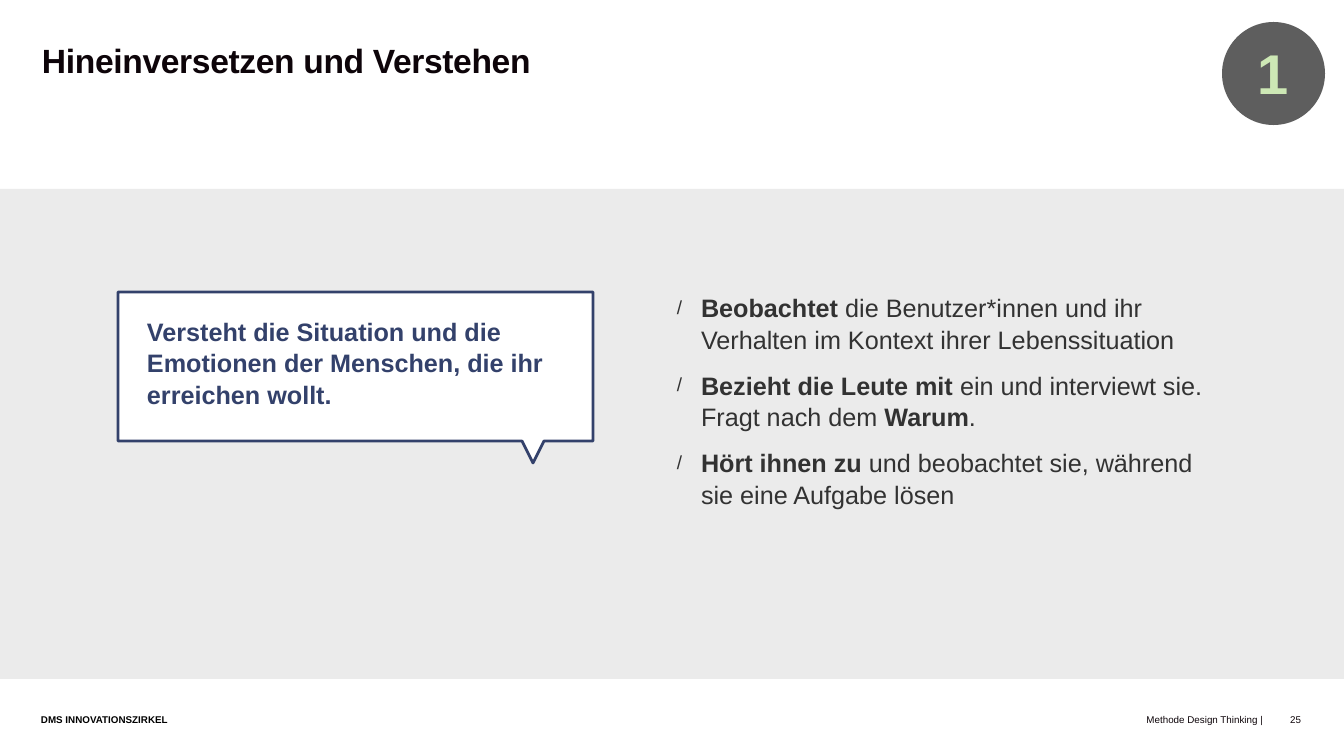
"""Build the slide on empathising and understanding."""
from lxml import etree
from pptx import Presentation
from pptx.dml.color import RGBColor
from pptx.enum.shapes import MSO_SHAPE
from pptx.enum.text import MSO_ANCHOR, PP_ALIGN
from pptx.oxml.ns import qn
from pptx.util import Pt

RECT, OVAL = MSO_SHAPE.RECTANGLE, MSO_SHAPE.OVAL
LEFT, MID, RIGHT = PP_ALIGN.LEFT, PP_ALIGN.CENTER, PP_ALIGN.RIGHT
TOP, CENTER = MSO_ANCHOR.TOP, MSO_ANCHOR.MIDDLE
PX = 914400 / 50.4
FONT = "Arial"
HEX = {"ink": "0D0409", "black": "000000", "body": "323232", "navy": "33416B",
       "band": "EBEBEB", "white": "FFFFFF", "disc": "5E5E5E", "lime": "CDE8B5"}

TITLE = "Hineinversetzen und Verstehen"
STEP = "1"
QUOTE = "Versteht die Situation und die Emotionen der Menschen, die ihr erreichen wollt."
TASKS = [
    [("Beobachtet", True),
     (" die Benutzer*innen und ihr Verhalten im Kontext ihrer Lebenssituation", False)],
    [("Bezieht die Leute mit", True), (" ein und interviewt sie. Fragt nach dem ", False),
     ("Warum", True), (".", False)],
    [("Hört ihnen zu", True),
     (" und beobachtet sie, während sie eine Aufgabe lösen", False)],
]
GROUP, TOPIC, PAGE = "DMS INNOVATIONSZIRKEL", "Methode Design Thinking |", "25"
BUBBLE = [(118, 292), (118, 441), (522, 441), (533, 463), (544, 441), (593, 441), (593, 292)]


def emu(*vals):
    return [round(v * PX) for v in vals]


def color(name):
    return RGBColor.from_string(HEX[name])


def paint(shape, fill, line=None, width=0):
    shape.shadow.inherit = False
    shape.fill.solid()
    shape.fill.fore_color.rgb = color(fill)
    if line:
        shape.line.color.rgb = color(line)
        shape.line.width = Pt(width)
    else:
        shape.line.fill.background()


def bullet(para, mark, size, hang):
    props = para._p.get_or_add_pPr()
    step = emu(hang)[0]
    props.set("marL", str(step))
    props.set("indent", str(-step))
    for tag, key, val in (("a:buSzPct", "val", size * 1000),
                          ("a:buFont", "typeface", FONT), ("a:buChar", "char", mark)):
        etree.SubElement(props, qn(tag)).set(key, str(val))


def write(slide, text, box, size, ink, bold=False, align=LEFT, anchor=TOP,
          lead=None, gap=0, track=0, wrap=True, mark=None):
    frame = slide.shapes.add_textbox(*emu(*box)).text_frame
    frame.word_wrap = wrap
    frame.vertical_anchor = anchor
    frame.margin_left = frame.margin_right = frame.margin_top = frame.margin_bottom = 0
    paras = [[(text, bold)]] if isinstance(text, str) else text
    for i, runs in enumerate(paras):
        para = frame.add_paragraph() if i else frame.paragraphs[0]
        if mark:
            bullet(para, mark, 75, 24)
        para.alignment = align
        if lead:
            para.line_spacing = lead
        if i and gap:
            para.space_before = Pt(gap)
        for words, heavy in runs:
            run = para.add_run()
            run.text = words
            font = run.font
            font.name, font.size, font.bold = FONT, Pt(size), heavy
            font.color.rgb = color(ink)
            if track:
                run._r.get_or_add_rPr().set("spc", str(round(track * 100)))


def main():
    deck = Presentation()
    deck.slide_width, deck.slide_height = emu(1344, 756)
    slide = deck.slides.add_slide(deck.slide_layouts[6])
    shapes = slide.shapes

    foot = dict(size=14, lead=Pt(16))
    write(slide, PAGE, (1289, 714, 12, 12), ink="ink", align=RIGHT, wrap=False, **foot)
    write(slide, TOPIC, (651, 714, 612, 12), ink="ink", align=RIGHT, **foot)
    write(slide, GROUP, (41, 714, 600, 12), ink="black", bold=True, **foot)
    write(slide, TITLE, (42, 42, 1160, 76), 48, "ink", bold=True, lead=Pt(54), track=-0.5)

    paint(shapes.add_shape(RECT, *emu(0, 189, 1344, 490)), "band")
    pen = shapes.build_freeform(*BUBBLE[0], scale=PX)
    pen.add_line_segments(BUBBLE[1:], close=True)
    paint(pen.convert_to_shape(), "white", "navy", 4)

    write(slide, TASKS, (677, 291, 550, 253), 36, "body", lead=1.05, gap=20, mark="/")
    write(slide, QUOTE, (147, 315, 418, 103), 36, "navy", bold=True, lead=1.04)

    disc = (1222, 22, 103, 103)
    paint(shapes.add_shape(OVAL, *emu(*disc)), "disc")
    write(slide, STEP, (1258, 39, 30, 67), 80, "lime", bold=True, align=MID,
          anchor=CENTER, track=-2.4, wrap=False)
    deck.save("out.pptx")


if __name__ == "__main__":
    main()
